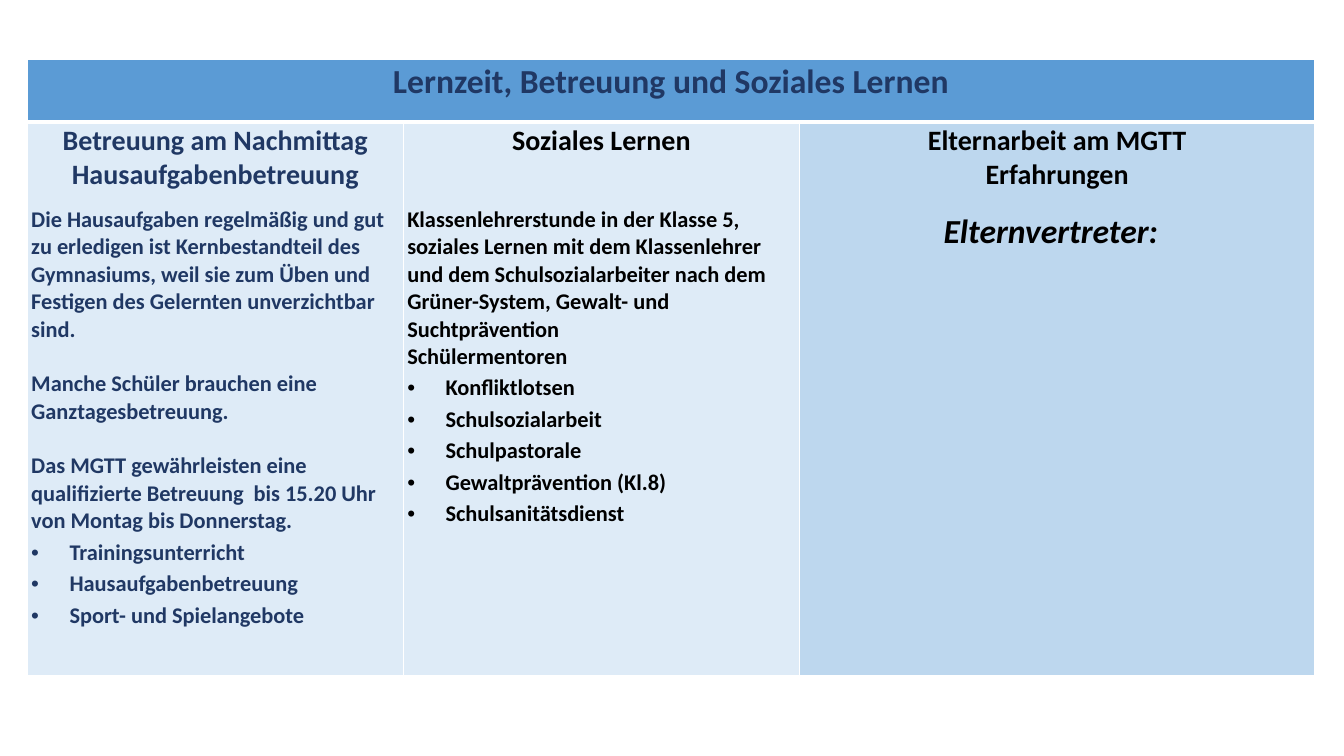
"""Builds the slide on study time, care and social learning."""
from dataclasses import dataclass, field

from lxml.etree import SubElement
from pptx import Presentation
from pptx.dml.color import RGBColor
from pptx.enum.text import MSO_AUTO_SIZE, PP_ALIGN
from pptx.oxml.ns import qn
from pptx.util import Inches, Pt


@dataclass(frozen=True)
class Theme:
    font: str = "Calibri"
    navy: str = "203864"
    black: str = "000000"
    white: str = "FFFFFF"
    header: str = "5B9BD5"
    light: str = "DEEBF7"
    medium: str = "BDD7EE"
    title: float = 24
    heading: float = 20
    body: float = 16
    thin: float = 1
    thick: float = 3


THEME = Theme()


@dataclass(frozen=True)
class Para:
    text: str
    size: float = THEME.body
    centered: bool = False
    bullet: bool = False
    before: float = 0


@dataclass(frozen=True)
class Column:
    width: float
    fill: str
    color: str
    paras: list[Para] = field(default_factory=list)


def heading(text: str) -> Para:
    return Para(text, THEME.heading, centered=True)


def bullets(*items: str) -> list[Para]:
    return [Para(item, bullet=True) for item in items]


TITLE = Para("Lernzeit, Betreuung und Soziales Lernen", THEME.title, centered=True)
COLUMNS = [
    Column(3.73, THEME.light, THEME.navy, [
        heading("Betreuung am Nachmittag Hausaufgabenbetreuung"),
        Para("Die Hausaufgaben regelmäßig und gut zu erledigen ist Kernbestandteil "
             "des Gymnasiums, weil sie zum Üben und Festigen des Gelernten "
             "unverzichtbar sind.", before=9.8),
        Para("Manche Schüler brauchen eine Ganztagesbetreuung.", before=19.5),
        Para("Das MGTT gewährleisten eine qualifizierte Betreuung  bis 15.20 Uhr "
             "von Montag bis Donnerstag.", before=19.5),
        *bullets("Trainingsunterricht", "Hausaufgabenbetreuung",
                 "Sport- und Spielangebote"),
    ]),
    Column(3.93, THEME.light, THEME.black, [
        heading("Soziales Lernen"),
        Para("Klassenlehrerstunde in der Klasse 5, soziales Lernen mit dem "
             "Klassenlehrer und dem Schulsozialarbeiter nach dem Grüner-System, "
             "Gewalt- und Suchtprävention", before=34.2),
        Para("Schülermentoren"),
        *bullets("Konfliktlotsen", "Schulsozialarbeit", "Schulpastorale",
                 "Gewaltprävention (Kl.8)", "Schulsanitätsdienst"),
    ]),
    Column(5.11, THEME.medium, THEME.black, [
        heading("Elternarbeit am MGTT"),
        heading("Erfahrungen"),
    ]),
]
ROW_HEIGHTS = [0.62, 5.49]


def write(tf, paras: list[Para], color: str, italic: bool = False) -> None:
    for i, para in enumerate(paras):
        p = tf.paragraphs[0] if i == 0 else tf.add_paragraph()
        layout = {
            "alignment": PP_ALIGN.CENTER if para.centered else PP_ALIGN.LEFT,
            "line_spacing": 1.15 if para.bullet else 1.0,
            "space_before": Pt(para.before),
        }
        for name, value in layout.items():
            setattr(p, name, value)
        if para.bullet:
            pPr = p._p.get_or_add_pPr()
            pPr.set("marL", str(Inches(0.38)))
            pPr.set("indent", str(-Inches(0.38)))
            SubElement(pPr, qn("a:buFont"), typeface="Arial")
            SubElement(pPr, qn("a:buChar"), char="•")
        r = p.add_run()
        r.text = para.text
        font = {"name": THEME.font, "size": Pt(para.size), "bold": True, "italic": italic}
        for name, value in font.items():
            setattr(r.font, name, value)
        r.font.color.rgb = RGBColor.from_string(color)


def style_cell(cell, fill: str, top: float, bottom: float) -> None:
    margins = {"margin_left": 0.04, "margin_top": 0.02,
               "margin_right": 0.04, "margin_bottom": 0}
    for name, value in margins.items():
        setattr(cell, name, Inches(value))
    tcPr = cell._tc.get_or_add_tcPr()
    widths = {"L": THEME.thin, "R": THEME.thin, "T": top, "B": bottom}
    for side, width in widths.items():
        ln = SubElement(tcPr, qn(f"a:ln{side}"), w=str(Pt(width)))
        SubElement(SubElement(ln, qn("a:solidFill")), qn("a:srgbClr"), val=THEME.white)
    cell.fill.solid()
    cell.fill.fore_color.rgb = RGBColor.from_string(fill)


def add_overview(s) -> None:
    width = sum(column.width for column in COLUMNS)
    table = s.shapes.add_table(
        len(ROW_HEIGHTS), len(COLUMNS), Inches(0.27), Inches(0.59),
        Inches(width), Inches(sum(ROW_HEIGHTS))).table
    table.first_row = table.horz_banding = False
    for row, height in zip(table.rows, ROW_HEIGHTS):
        row.height = Inches(height)
    for i, column in enumerate(COLUMNS):
        table.columns[i].width = Inches(column.width)
        style_cell(table.cell(0, i), THEME.header, THEME.thin, THEME.thick)
        style_cell(table.cell(1, i), column.fill, THEME.thick, THEME.thin)
        write(table.cell(1, i).text_frame, column.paras, column.color)
    title = table.cell(0, 0)
    title.merge(table.cell(0, len(COLUMNS) - 1))
    write(title.text_frame, [TITLE], THEME.navy)


def add_speaker(s) -> None:
    sp = s.shapes.add_textbox(Inches(9.26), Inches(2.03), Inches(2.85), Inches(0.91))
    tf = sp.text_frame
    tf.word_wrap = True
    tf.auto_size = MSO_AUTO_SIZE.SHAPE_TO_FIT_TEXT
    write(tf, [Para("Elternvertreter:", THEME.title)], THEME.black, italic=True)


def main() -> None:
    prs = Presentation()
    prs.slide_width, prs.slide_height = Inches(13.33), Inches(7.5)
    s = prs.slides.add_slide(prs.slide_layouts[6])
    add_overview(s)
    add_speaker(s)
    prs.save("out.pptx")


if __name__ == "__main__":
    main()
